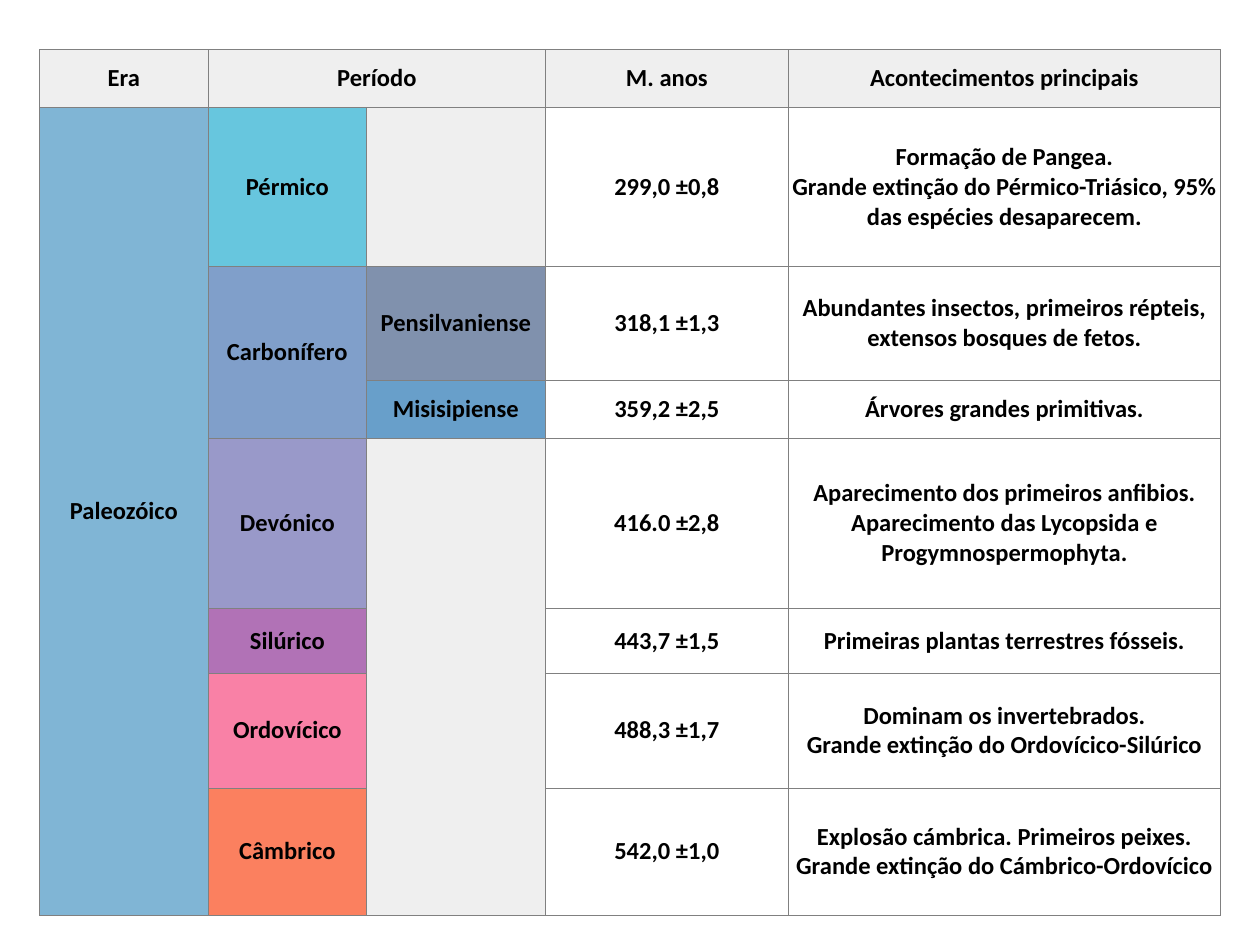
from dataclasses import dataclass

from lxml import etree
from pptx import Presentation
from pptx.dml.color import RGBColor
from pptx.enum.text import MSO_ANCHOR, PP_ALIGN
from pptx.oxml.ns import qn
from pptx.util import Pt

MIDDLE = MSO_ANCHOR.MIDDLE
CENTER = PP_ALIGN.CENTER


@dataclass(frozen=True)
class Theme:
    font: str = "Calibri"
    size: float = 14
    ink: str = "000000"
    gray: str = "EFEFEF"
    line: str = "808080"
    width: float = 0.25
    inset: float = 0.72


@dataclass(frozen=True)
class Box:
    """A table cell: its place, wording, fill and span."""
    row: int
    col: int
    text: tuple[str, ...] = ()
    fill: str | None = None
    rows: int = 1
    cols: int = 1


@dataclass(frozen=True)
class Age:
    """A dated row: its span of years and main events."""
    years: str
    events: tuple[str, ...]


THEME = Theme()
LEFT, TOP = 22.5, 28.2
WIDTHS = (96.6, 90.3, 102.3, 138.9, 246.9)
HEIGHTS = (33.1, 90.9, 65.2, 33.1, 97.2, 37, 65.7, 72.6)

# Header, era and periods
BOXES = [
    Box(0, 0, ("Era",), THEME.gray),
    Box(0, 1, ("Período",), THEME.gray, cols=2),
    Box(0, 3, ("M. anos",), THEME.gray),
    Box(0, 4, ("Acontecimentos principais",), THEME.gray),
    Box(1, 0, ("Paleozóico",), "80B5D5", rows=7),
    Box(1, 1, ("Pérmico",), "67C6DE"),
    Box(1, 2, fill=THEME.gray),
    Box(2, 1, ("Carbonífero",), "809FCA", rows=2),
    Box(2, 2, ("Pensilvaniense",), "8091AD"),
    Box(3, 2, ("Misisipiense",), "689FCA"),
    Box(4, 1, ("Devónico",), "9999C9"),
    Box(4, 2, fill=THEME.gray, rows=4),
    Box(5, 1, ("Silúrico",), "B172B6"),
    Box(6, 1, ("Ordovícico",), "F981A6"),
    Box(7, 1, ("Câmbrico",), "FB805F"),
]

# Dates and events, one per row; a newline is a break inside a paragraph
AGES = [
    Age("299,0 ±0,8", (
        "Formação de Pangea.",
        "Grande extinção do Pérmico-Triásico, 95% das espécies desaparecem.")),
    Age("318,1 ±1,3", (
        "Abundantes insectos, primeiros répteis,\nextensos bosques de fetos.",)),
    Age("359,2 ±2,5", ("Árvores grandes primitivas.",)),
    Age("416.0 ±2,8", (
        "Aparecimento dos primeiros anfibios.",
        "Aparecimento das Lycopsida e Progymnospermophyta.")),
    Age("443,7 ±1,5", ("Primeiras plantas terrestres fósseis.",)),
    Age("488,3 ±1,7", (
        "Dominam os invertebrados.\nGrande extinção do Ordovícico-Silúrico",)),
    Age("542,0 ±1,0", (
        "Explosão cámbrica. Primeiros peixes.\n"
        "Grande extinção do Cámbrico-Ordovícico",)),
]


def add_edges(cell) -> None:
    """Draw a thin line on all four sides of a cell."""
    props = cell._tc.get_or_add_tcPr()
    for spot, side in enumerate(("a:lnL", "a:lnR", "a:lnT", "a:lnB")):
        line = etree.Element(qn(side), w=str(Pt(THEME.width)))
        fill = etree.SubElement(line, qn("a:solidFill"))
        etree.SubElement(fill, qn("a:srgbClr"), val=THEME.line)
        props.insert(spot, line)


def fill_box(table, box: Box) -> None:
    """Merge, paint and write one cell."""
    cell = table.cell(box.row, box.col)
    if box.rows > 1 or box.cols > 1:
        cell.merge(table.cell(box.row + box.rows - 1, box.col + box.cols - 1))
    if box.fill:
        cell.fill.solid()
        cell.fill.fore_color.rgb = RGBColor.from_string(box.fill)
    else:
        cell.fill.background()
    cell.vertical_anchor = MIDDLE
    cell.margin_left = cell.margin_right = Pt(THEME.inset)
    cell.margin_top = cell.margin_bottom = Pt(THEME.inset)
    frame = cell.text_frame
    for spot, text in enumerate(box.text):
        para = frame.add_paragraph() if spot else frame.paragraphs[0]
        para.text = text
        para.alignment = CENTER
        font = para.font
        font.name, font.size, font.bold = THEME.font, Pt(THEME.size), True
        font.color.rgb = RGBColor.from_string(THEME.ink)


def add_grid(slide):
    """Add the bare table with its sizes and lines."""
    table = slide.shapes.add_table(
        len(HEIGHTS), len(WIDTHS), Pt(LEFT), Pt(TOP),
        Pt(sum(WIDTHS)), Pt(sum(HEIGHTS))).table
    table.first_row = table.horz_banding = False
    for col, width in zip(table.columns, WIDTHS):
        col.width = Pt(width)
    for row, height in zip(table.rows, HEIGHTS):
        row.height = Pt(height)
    for cell in table.iter_cells():
        add_edges(cell)
    return table


def main() -> None:
    deck = Presentation()
    deck.slide_width, deck.slide_height = Pt(720), Pt(540)
    slide = deck.slides.add_slide(deck.slide_layouts[6])
    table = add_grid(slide)
    for box in BOXES:
        fill_box(table, box)
    for row, age in enumerate(AGES, start=1):
        fill_box(table, Box(row, 3, (age.years,)))
        fill_box(table, Box(row, 4, age.events))
    deck.save("out.pptx")


if __name__ == "__main__":
    main()
